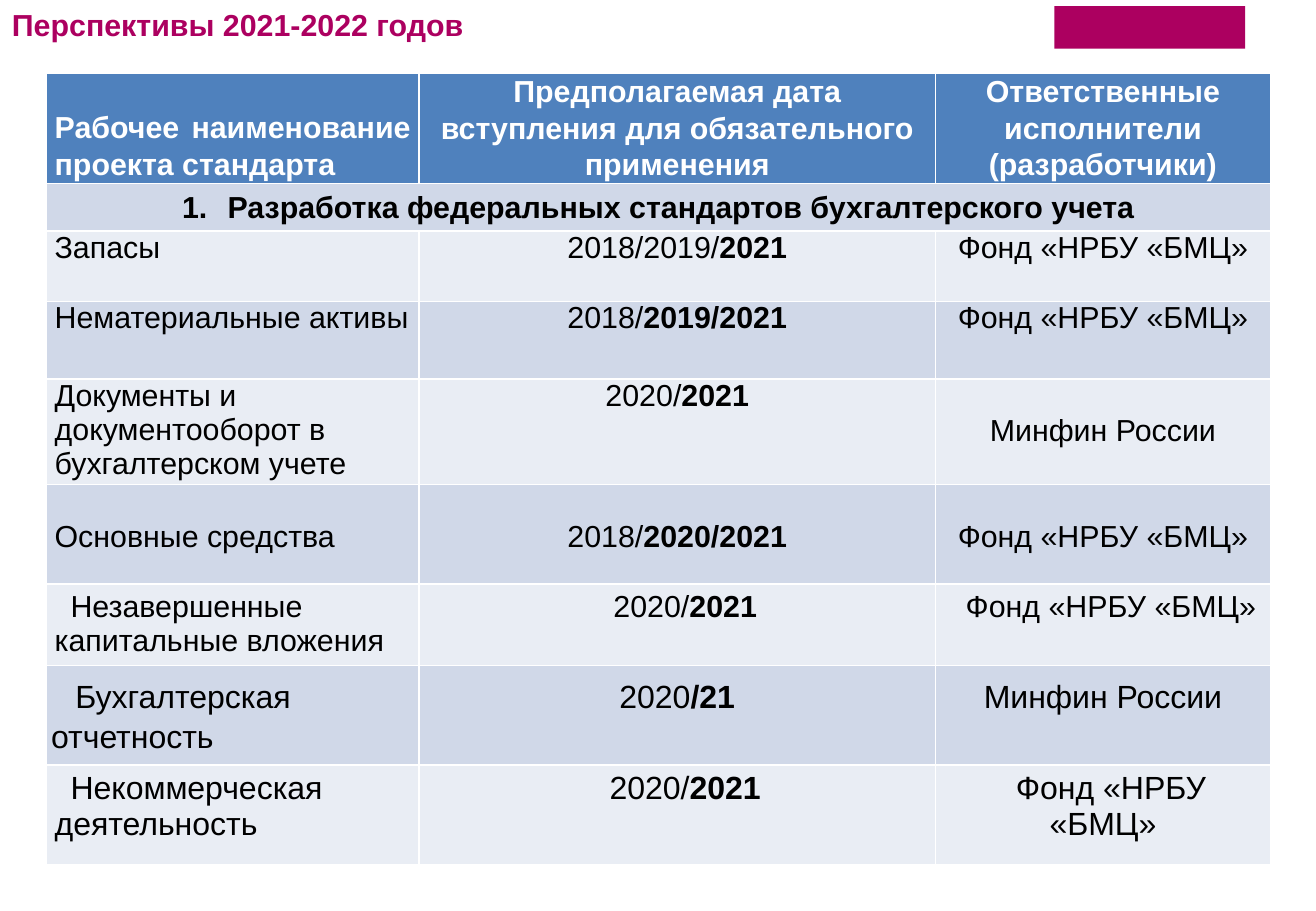
from pptx import Presentation, oxml
from pptx.dml.color import RGBColor
from pptx.enum import shapes, text
from pptx.oxml import ns
from pptx.util import Pt

WHITE = RGBColor(0xFF, 0xFF, 0xFF)
BLACK = RGBColor(0, 0, 0)
BERRY = RGBColor(0xAC, 0x00, 0x60)
BLUE = RGBColor(0x4F, 0x81, 0xBD)
DARK = RGBColor(0xD0, 0xD8, 0xE8)
LIGHT = RGBColor(0xE9, 0xED, 0xF4)

LEFT, MID, JUST = (text.PP_ALIGN.LEFT, text.PP_ALIGN.CENTER,
                   text.PP_ALIGN.JUSTIFY)
WIDTHS = [221, 306, 198.7]
HEIGHTS = [65.5, 28.1, 41.8, 46, 62.6, 59, 48.2, 59, 59]
LINE = 20.7  # one line of 18 pt text

HEADS = ["Рабочее наименование проекта стандарта",
         "Предполагаемая дата вступления для обязательного применения",
         "Ответственные исполнители (разработчики)"]
FUND, STATE = "Фонд «НРБУ «БМЦ»", "Минфин России"

# Margins (side, top), indents, size and spacing of each kind of row
PLAIN = dict(side=5, tops=(0, 0, 0), dents=(0, 0, 0), size=18, space=1)
MIXED = {**PLAIN, "tops": (0, 0, LINE)}
LOW = {**PLAIN, "tops": (LINE,) * 3}
DENT = {**PLAIN, "tops": (3.6,) * 3, "dents": (9.4,) * 3}
WIDE = dict(side=2.9, tops=(5,) * 3, dents=(14.4, 0, 0), size=19, space=1.15)
BIG = {**DENT, "size": 19}

# Name, first dates, bold dates, maker, name alignment, kind of row
PLANS = [
    ("Запасы", "2018/2019/", "2021", FUND, JUST, PLAIN),
    ("Нематериальные активы", "2018/", "2019/2021", FUND, JUST, PLAIN),
    ("Документы и документооборот в бухгалтерском учете",
     "2020/", "2021", STATE, LEFT, MIXED),
    ("Основные средства", "2018/", "2020/2021", FUND, JUST, LOW),
    ("Незавершенные капитальные вложения", "2020/", "2021", FUND, JUST, DENT),
    ("Бухгалтерская отчетность", "2020", "/21", STATE, LEFT, WIDE),
    ("Некоммерческая деятельность", "2020/", "2021", FUND, LEFT, BIG),
]


def add_run(para, words, size, color, bold=False):
    run = para.add_run()
    run.text = words
    font = run.font
    font.name, font.size, font.bold = "Arial", Pt(size), bold
    font.color.rgb = color


def add_title(slide):
    frame = slide.shapes.add_textbox(0, 0, Pt(285), Pt(29)).text_frame
    frame.word_wrap = False
    add_run(frame.paragraphs[0], "Перспективы 2021-2022 годов", 18, BERRY,
            True)


def fill_cell(cell, runs, fill, color=BLACK, align=MID, side=5, top=0,
              foot=0, dent=0, size=18, space=1):
    cell.fill.solid()
    cell.fill.fore_color.rgb = fill
    cell.margin_left = cell.margin_right = Pt(side)
    cell.margin_top, cell.margin_bottom = Pt(top), Pt(foot)
    para = cell.text_frame.paragraphs[0]
    para.alignment, para.line_spacing = align, space
    if dent:
        para._p.get_or_add_pPr().set("indent", str(Pt(dent)))
    for words, bold in runs:
        add_run(para, words, size, color, bold)
    return para


def add_section(table):
    first = table.cell(1, 0)
    first.merge(table.cell(1, 2))
    para = fill_cell(first, [], DARK, side=7.2, top=2.9, foot=2.9, space=1.07)
    first.vertical_anchor = text.MSO_ANCHOR.MIDDLE
    props = para._p.get_or_add_pPr()
    props.set("marL", str(Pt(27)))
    props.set("indent", str(Pt(-27)))
    props.append(oxml.parse_xml(
        f'<a:buFont {ns.nsdecls("a")} typeface="+mj-lt"/>'))
    props.append(oxml.parse_xml(
        f'<a:buAutoNum {ns.nsdecls("a")} type="arabicPeriod"/>'))
    add_run(para, "Разработка федеральных стандартов бухгалтерского учета",
            18, BLACK, True)


def add_plans(slide):
    # The default table style draws the white rules
    table = slide.shapes.add_table(
        len(HEIGHTS), len(WIDTHS), Pt(27.4), Pt(43.3),
        Pt(sum(WIDTHS)), Pt(sum(HEIGHTS))).table
    for col, width in zip(table.columns, WIDTHS):
        col.width = Pt(width)
    for row, height in zip(table.rows, HEIGHTS):
        row.height = Pt(height)

    # Header and section rows
    for c, head in enumerate(HEADS):
        fill_cell(table.cell(0, c), [(head, True)], BLUE, WHITE,
                  MID if c else JUST, top=0 if c else 21.2, space=1.07)
    add_section(table)

    # Standards
    for r, (name, old, new, maker, align, kind) in enumerate(PLANS, 2):
        cells = [[(name, False)], [(old, False), (new, True)],
                 [(maker, False)]]
        for c, runs in enumerate(cells):
            fill_cell(table.cell(r, c), runs, DARK if r % 2 else LIGHT,
                      align=MID if c else align, side=kind["side"],
                      top=kind["tops"][c], dent=kind["dents"][c],
                      size=kind["size"], space=kind["space"])


def add_mark(slide):
    mark = slide.shapes.add_shape(
        shapes.MSO_SHAPE.RECTANGLE, Pt(625), Pt(3.6), Pt(113), Pt(25.2))
    mark.shadow.inherit = False
    mark.fill.solid()
    mark.fill.fore_color.rgb = BERRY
    mark.line.fill.background()


def main():
    deck = Presentation()
    deck.slide_width, deck.slide_height = Pt(780), Pt(540)
    slide = deck.slides.add_slide(deck.slide_layouts[6])
    add_mark(slide)
    add_plans(slide)
    add_title(slide)
    deck.save("out.pptx")


if __name__ == "__main__":
    main()
